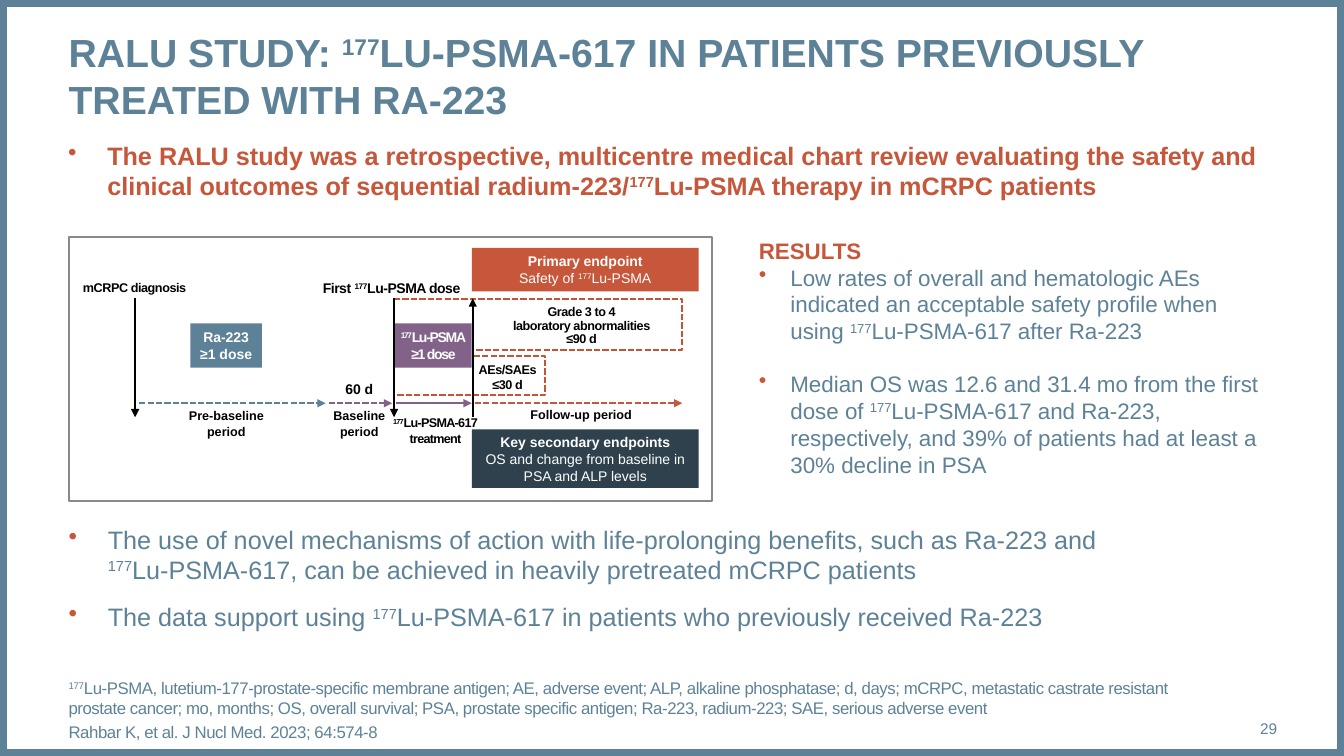
"""Build the RALU study slide with its timeline diagram."""
from lxml.etree import SubElement
from pptx import Presentation
from pptx.dml.color import RGBColor as RGB
from pptx.enum.dml import MSO_LINE as DASH
from pptx.enum.shapes import MSO_CONNECTOR as LINK, MSO_SHAPE as SHAPE
from pptx.enum.text import MSO_ANCHOR as ANCHOR, PP_ALIGN as ALIGN
from pptx.oxml.ns import qn
from pptx.util import Pt


class Theme:
    font = "Arial"
    steel = RGB.from_string("5D8298")
    rust = RGB.from_string("C6573B")
    brick = RGB.from_string("C55336")
    plum = RGB.from_string("826288")
    navy = RGB.from_string("2E414C")
    grey = RGB.from_string("8B878B")
    black = RGB.from_string("000000")
    white = RGB.from_string("FFFFFF")
    title, body, side, note, page, label, small = 28, 18, 16, 12, 11, 10, 9


def frame(shape, inset=(0, 0, 0, 0), anchor=ANCHOR.TOP):
    """Set wrap, insets and anchor, and return the text frame."""
    text = shape.text_frame
    text.word_wrap = True
    text.vertical_anchor = anchor
    text.margin_left, text.margin_top, text.margin_right, text.margin_bottom = map(Pt, inset)
    return text


def write(text, words, size, color, bold=False, align=ALIGN.LEFT, hang=0,
          bullet=False, before=0, after=0, lead=1.0, track=0):
    """Add a paragraph whose runs are parted by bars; a lone 177 is raised."""
    para = text.paragraphs[0]
    if para.runs:
        para = text.add_paragraph()
    para.alignment = align
    para.line_spacing = lead
    para.space_before, para.space_after = Pt(before), Pt(after)
    if bullet:
        props = para._p.get_or_add_pPr()
        props.set("marL", str(Pt(hang)))
        props.set("indent", str(-Pt(hang)))
        tint = SubElement(props, qn("a:buClr"))
        SubElement(tint, qn("a:srgbClr")).set("val", str(Theme.rust))
        SubElement(props, qn("a:buChar")).set("char", "•")
    for part in words.split("|"):
        if part == "\n":
            para.add_line_break()
            continue
        run = para.add_run()
        run.text = part
        run.font.name = Theme.font
        run.font.size = Pt(size)
        run.font.bold = bold
        run.font.color.rgb = color
        props = run._r.get_or_add_rPr()
        if part == "177":
            props.set("baseline", "30000")
        if track:
            props.set("spc", str(round(track * 100)))


deck = Presentation()
deck.slide_width, deck.slide_height = Pt(960), Pt(540)
slide = deck.slides.add_slide(deck.slide_layouts[6])
shapes = slide.shapes

for area, color, width in [((0, 0, 960, 540), Theme.steel, 10),
                           ((49, 169.2, 459.4, 188.6), Theme.grey, 1.5)]:
    border = shapes.add_shape(SHAPE.RECTANGLE, *map(Pt, area))
    border.shadow.inherit = False
    border.fill.background()
    border.line.color.rgb = color
    border.line.width = Pt(width)

title = frame(shapes.add_textbox(Pt(49), Pt(20.2), Pt(863), Pt(67.7)))
write(title, "RALU STUDY: |177|LU-PSMA-617 IN PATIENTS PREVIOUSLY TREATED WITH RA-223",
      Theme.title, Theme.steel, True)

intro = frame(shapes.add_textbox(Pt(48.6), Pt(100.1), Pt(863), Pt(62.6)))
write(intro, "The RALU study was a retrospective, multicentre medical chart review evaluating "
      "the safety and clinical outcomes of sequential radium-223/|177|Lu-PSMA therapy in "
      "mCRPC patients", Theme.body, Theme.rust, True, hang=28, bullet=True)

side = frame(shapes.add_textbox(Pt(535), Pt(165.6), Pt(378.7), Pt(181.4)), (7.2, 3.6, 7.2, 3.6))
write(side, "RESULTS", Theme.side, Theme.rust, True)
for words, gap in [
    ("Low rates of overall and hematologic AEs indicated an acceptable safety profile "
     "when using |177|Lu-PSMA-617 after Ra-223", 0),
    ("Median OS was 12.6 and 31.4 mo from the first dose of |177|Lu-PSMA-617 and Ra-223, "
     "respectively, and 39% of patients had at least a 30% decline in PSA", 18.4),
]:
    write(side, words, Theme.side, Theme.steel, hang=22.5, bullet=True, before=gap)

close = frame(shapes.add_textbox(Pt(49), Pt(370.8), Pt(800.6), Pt(85)), (0, 3.6, 7.2, 3.6))
for words in [
    "The use of novel mechanisms of action with life-prolonging benefits, such as Ra-223 and "
    "|\n|177|Lu-PSMA-617, can be achieved in heavily pretreated mCRPC patients",
    "The data support using |177|Lu-PSMA-617 in patients who previously received Ra-223",
]:
    write(close, words, Theme.body, Theme.steel, hang=28, bullet=True, after=12)

notes = frame(shapes.add_textbox(Pt(49), Pt(492.5), Pt(787.7), Pt(28.8)), anchor=ANCHOR.MIDDLE)
for words in [
    "177|Lu-PSMA, lutetium-177-prostate-specific membrane antigen; AE, adverse event; ALP, "
    "alkaline phosphatase; d, days; mCRPC, metastatic castrate resistant prostate cancer; "
    "mo, months; OS, overall survival; PSA, prostate specific antigen; Ra-223, radium-223; "
    "SAE, serious adverse event",
    "Rahbar K, et al. J Nucl Med. 2023; 64:574-8",
]:
    write(notes, words, Theme.note, Theme.steel, before=3, track=-0.3)

page = frame(shapes.add_textbox(Pt(850.3), Pt(506.2), Pt(62), Pt(28.8)), anchor=ANCHOR.MIDDLE)
write(page, "29", Theme.page, Theme.steel, align=ALIGN.RIGHT)

boxes = [
    ((136, 231, 51, 31.7), Theme.steel, ["Ra-223", "≥1 dose"], 2, 0),
    ((282.3, 231, 54.7, 31.7), Theme.plum, ["177|Lu-PSMA", "≥1 dose"], 2, -0.9),
    ((337, 177.1, 162, 31), Theme.rust, ["Primary endpoint", "Safety of |177|Lu-PSMA"], 1, 0),
    ((337, 306.7, 162, 41.8), Theme.navy,
     ["Key secondary endpoints", "OS and change from baseline in", "PSA and ALP levels"], 1, 0),
]
for area, color, rows, heads, track in boxes:
    box = shapes.add_shape(SHAPE.RECTANGLE, *map(Pt, area))
    box.shadow.inherit = False
    box.fill.solid()
    box.fill.fore_color.rgb = color
    box.line.fill.background()
    text = frame(box, (2.9,) * 4, ANCHOR.MIDDLE)
    for row, words in enumerate(rows):
        write(text, words, Theme.label, Theme.white, row < heads, ALIGN.CENTER, track=track)

labels = [
    ((46.8, 200.2, 98.6, 10.8), ["mCRPC diagnosis"], Theme.small, -0.3, 1.0),
    ((228.2, 199.4, 103, 12.2), ["First |177|Lu-PSMA dose"], Theme.label, -0.3, 1.0),
    ((228.2, 271.4, 56.9, 12.2), ["60 d"], Theme.label, 0, 1.0),
    ((125.3, 291.6, 72.7, 21.6), ["Pre-baseline", "period"], Theme.small, 0, 1.0),
    ((228.2, 291.6, 56.9, 21.6), ["Baseline", "period"], Theme.small, 0, 1.0),
    ((276.5, 296.6, 69.1, 21.6), ["177|Lu-PSMA-617", "treatment"], Theme.small, -0.5, 1.0),
    ((373.7, 290.9, 82.8, 10.8), ["Follow-up period"], Theme.small, 0, 1.0),
    ((334.1, 258.5, 56.9, 21.6), ["AEs/SAEs", "≤30 d"], Theme.small, -0.3, 1.0),
    ((362.9, 218.2, 105.1, 29.5), ["Grade 3 to 4", "laboratory abnormalities", "≤90 d"],
     Theme.small, -0.3, 0.9),
]
for area, rows, size, track, lead in labels:
    text = frame(shapes.add_textbox(*map(Pt, area)), anchor=ANCHOR.MIDDLE)
    for words in rows:
        write(text, words, size, Theme.black, True, ALIGN.CENTER, lead=lead, track=track)

for points in [
    [(281.5, 213.8), (487.4, 213.8), (487.4, 249.8), (339.1, 249.8)],
    [(338.4, 254.2), (389.5, 254.2), (389.5, 282.2), (283, 282.2)],
]:
    spots = [(Pt(x), Pt(y)) for x, y in points]
    path = shapes.build_freeform(*spots[0])
    path.add_line_segments(spots[1:], close=False)
    span = path.convert_to_shape()
    span.shadow.inherit = False
    span.fill.background()
    span.line.color.rgb = Theme.brick
    span.line.width = Pt(1.5)
    span.line.dash_style = DASH.SQUARE_DOT

axis, top, base = 288, 213.1, 298.1
arrows = [
    ((99.4, axis, 232.6, axis), Theme.steel, True),
    ((234.7, axis, 280.1, axis), Theme.plum, True),
    ((283, axis, 337, axis), Theme.plum, False),
    ((339.1, axis, 487.4, axis), Theme.rust, True),
    ((96.5, top, 96.5, base), Theme.black, False),
    ((281.5, top, 281.5, base), Theme.black, False),
    ((337.7, base, 337.7, top), Theme.black, False),
]
for ends, color, dashed in arrows:
    arrow = shapes.add_connector(LINK.STRAIGHT, *map(Pt, ends))
    arrow.line.color.rgb = color
    arrow.line.width = Pt(1.5)
    if dashed:
        arrow.line.dash_style = DASH.SQUARE_DOT
    SubElement(arrow.line._get_or_add_ln(), qn("a:tailEnd")).set("type", "triangle")
    SubElement(arrow._element.spPr, qn("a:effectLst"))

deck.save("out.pptx")
